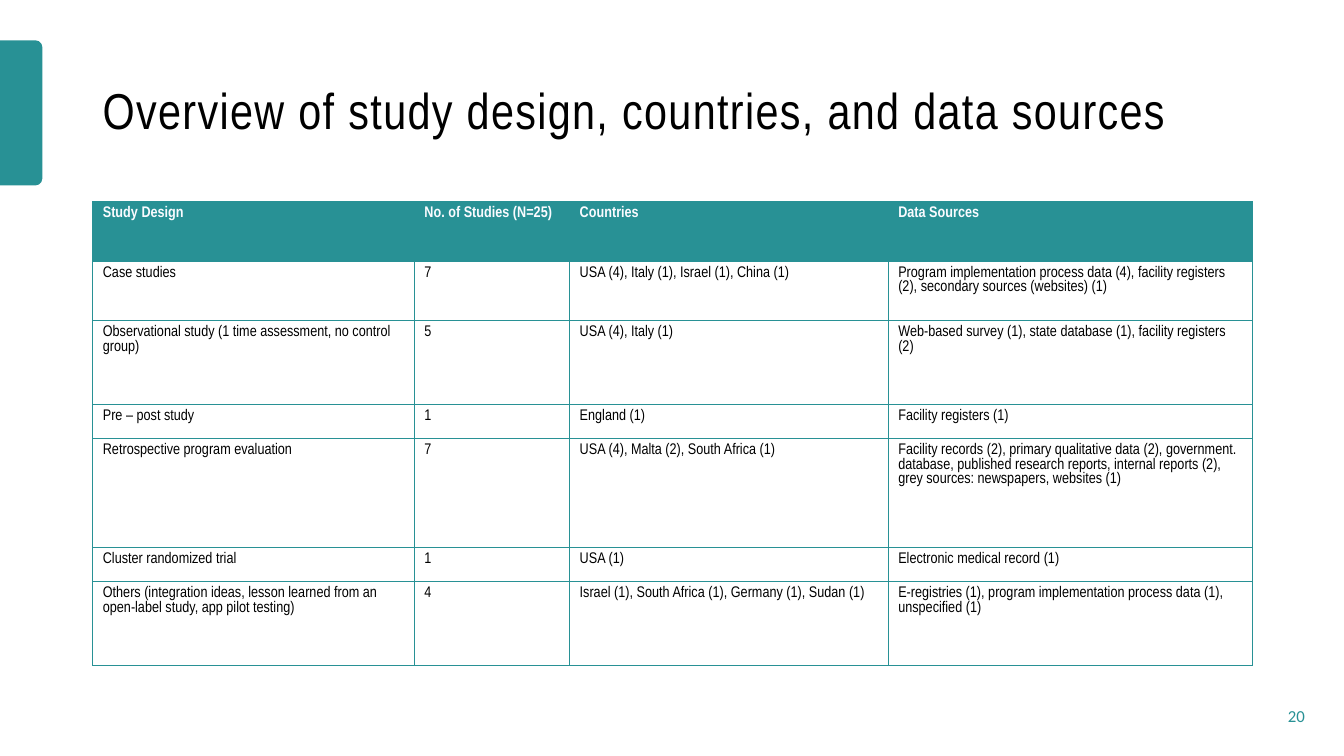
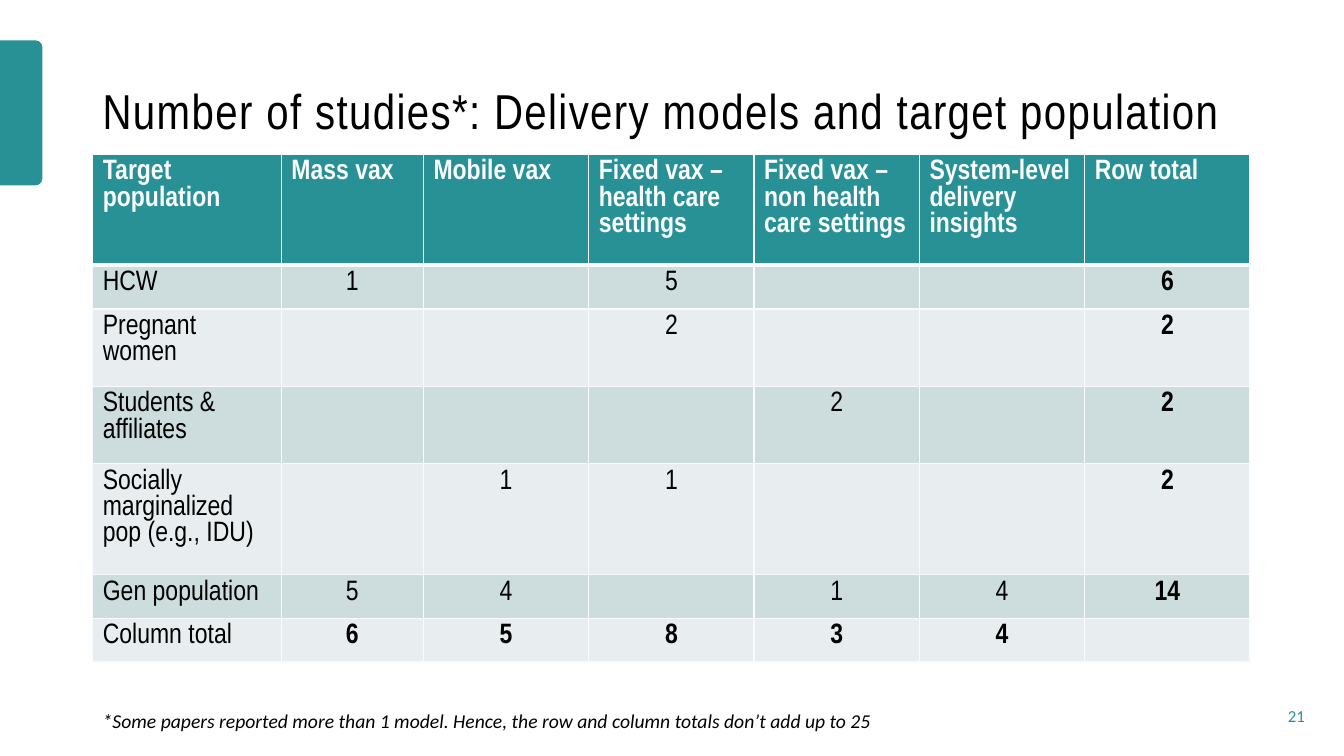
from lxml.etree import SubElement as Sub
from pptx import Presentation
from pptx.dml.color import RGBColor as RGB
from pptx.enum.shapes import MSO_SHAPE as Shape
from pptx.enum.text import MSO_ANCHOR as Anchor, MSO_AUTO_SIZE as Auto, PP_ALIGN as Align
from pptx.oxml.ns import qn
from pptx.util import Inches, Pt

WIDE, HIGH = 13.33, 7.5
LEFT, SPAN = 0.92, 11.5
TEAL = RGB(0x28, 0x91, 0x95)
PALE = RGB(0xFA, 0xFB, 0xFF)
BLACK = RGB(0, 0, 0)
BANDS = (RGB(0xCD, 0xDC, 0xDD), RGB(0xE8, 0xEE, 0xEF))
NARROW, PLAIN = "Arial Narrow", "Calibri"

DESIGN = [
    ["Study Design", "No. of Studies (N=25)", "Countries", "Data Sources"],
    ["Case studies", "7", "USA (4), Italy (1), Israel (1), China (1)",
     "Program implementation process data (4), facility registers (2), "
     "secondary sources (websites) (1)"],
    ["Observational study (1 time assessment, no control group)", "5",
     "USA (4), Italy (1)",
     "Web-based survey (1), state database (1), facility registers (2)"],
    ["Pre – post study", "1", "England (1)", "Facility registers (1)"],
    ["Retrospective program evaluation", "7",
     "USA (4), Malta (2), South Africa (1)",
     "Facility records (2), primary qualitative data (2), government. "
     "database, published research reports, internal reports (2), "
     "grey sources: newspapers, websites (1)"],
    ["Cluster randomized trial", "1", "USA (1)", "Electronic medical record (1)"],
    ["Others (integration ideas, lesson learned from an open-label study, "
     "app pilot testing)", "4",
     "Israel (1), South Africa (1), Germany (1), Sudan (1)",
     "E-registries (1), program implementation process data (1), unspecified (1)"],
]
MODELS = [
    ["Target population", "Mass vax", "Mobile vax",
     "Fixed vax – health care settings", "Fixed vax – non health care settings",
     "System-level delivery insights", "Row total"],
    ["HCW", "1", "", "5", "", "", "6"],
    ["Pregnant women", "", "", "2", "", "", "2"],
    ["Students & affiliates", "", "", "", "2", "", "2"],
    ["Socially marginalized pop (e.g., IDU)", "", "1", "1", "", "", "2"],
    ["Gen population", "5", "4", "", "1", "4", "14"],
    ["Column total", "6", "5", "8", "3", "4", ""],
]


def style(para, size, color, face=NARROW, bold=False, italic=False):
    for run in para.runs:
        font = run.font
        font.name, font.size, font.bold, font.italic = face, Pt(size), bold, italic
        font.color.rgb = color


def label(slide, box, text, size, color, face, italic=False):
    frame = slide.shapes.add_textbox(*map(Inches, box)).text_frame
    frame.word_wrap = True
    frame.text = text
    style(frame.paragraphs[0], size, color, face, italic=italic)
    return frame


def base(deck, title, size, page):
    """Add a slide with the side tab, title and page number."""
    slide = deck.slides.add_slide(deck.slide_layouts[6])
    tab = slide.shapes.add_shape(
        Shape.ROUND_2_SAME_RECTANGLE, *map(Inches, (-0.51, 0.91, 1.44, 0.42)))
    tab.rotation = 90
    tab.shadow.inherit = False
    tab.fill.solid()
    tab.fill.fore_color.rgb = TEAL
    tab.line.fill.background()

    head = label(slide, (LEFT, 0.4, SPAN, 1.45), title, size, BLACK, NARROW)
    head.vertical_anchor = Anchor.MIDDLE
    head.paragraphs[0].line_spacing = 0.9
    head.paragraphs[0].runs[0].font._element.set("spc", "100")

    foot = label(slide, (WIDE - 1.06, HIGH - 0.6, 0.77, 0.4), str(page), 12, TEAL, PLAIN)
    foot.vertical_anchor = Anchor.MIDDLE
    foot.paragraphs[0].alignment = Align.RIGHT
    return slide


def edge(cell, color, top=1, bottom=1):
    props = cell._tc.get_or_add_tcPr()
    for side, width in zip("LRTB", (1, 1, top, bottom)):
        line = Sub(props, qn(f"a:ln{side}"), w=str(Pt(width)))
        Sub(Sub(line, qn("a:solidFill")), qn("a:srgbClr"), val=str(color))


def paint(cell, color):
    if color is None:
        cell.fill.background()
    else:
        cell.fill.solid()
        cell.fill.fore_color.rgb = color


def grid(slide, top, data, cols, rows, size, rule, bands=(None,), rim=1, totals=False):
    """Draw a table; rim is the line under its header, totals marks sums in bold."""
    box = map(Inches, (LEFT, top, SPAN, sum(rows)))
    table = slide.shapes.add_table(len(rows), len(cols), *box).table
    for col, width in zip(table.columns, cols):
        col.width = Inches(width)
    for row, height in zip(table.rows, rows):
        row.height = Inches(height)
    for r, texts in enumerate(data):
        for c, text in enumerate(texts):
            cell, head = table.cell(r, c), r == 0
            edge(cell, rule, rim if r == 1 else 1, rim if head else 1)
            paint(cell, TEAL if head else bands[(r - 1) % len(bands)])
            cell.text_frame.text = text
            para = cell.text_frame.paragraphs[0]
            last = r == len(rows) - 1 or c == len(cols) - 1
            style(para, size, PALE if head else BLACK,
                  bold=head or (totals and c > 0 and last))
            if totals and not head and c > 0:
                para.alignment = Align.CENTER


def design(deck):
    slide = base(deck, "Overview of study design, countries, and data sources", 36, 20)
    grid(slide, 2, DESIGN, (3.19, 1.54, 3.16, 3.61),
         (0.59, 0.59, 0.83, 0.34, 1.08, 0.34, 0.83), 11, TEAL)


def models(deck):
    slide = base(deck, "Number of studies*: Delivery models and target population", 35, 21)
    grid(slide, 1.53, MODELS, (1.87, 1.41) + (1.64,) * 5, (0.41,) * 7, 20, PALE,
         BANDS, rim=3, totals=True)
    note = label(slide, (LEFT, 6.98, 7.89, 0.34),
                 "*Some papers reported more than 1 model. "
                 "Hence, the row and column totals don’t add up to 25",
                 14, BLACK, PLAIN, italic=True)
    note.word_wrap = False
    note.auto_size = Auto.SHAPE_TO_FIT_TEXT


def main():
    deck = Presentation()
    deck.slide_width, deck.slide_height = Inches(WIDE), Inches(HIGH)
    design(deck)
    models(deck)
    deck.save("out.pptx")


if __name__ == "__main__":
    main()
